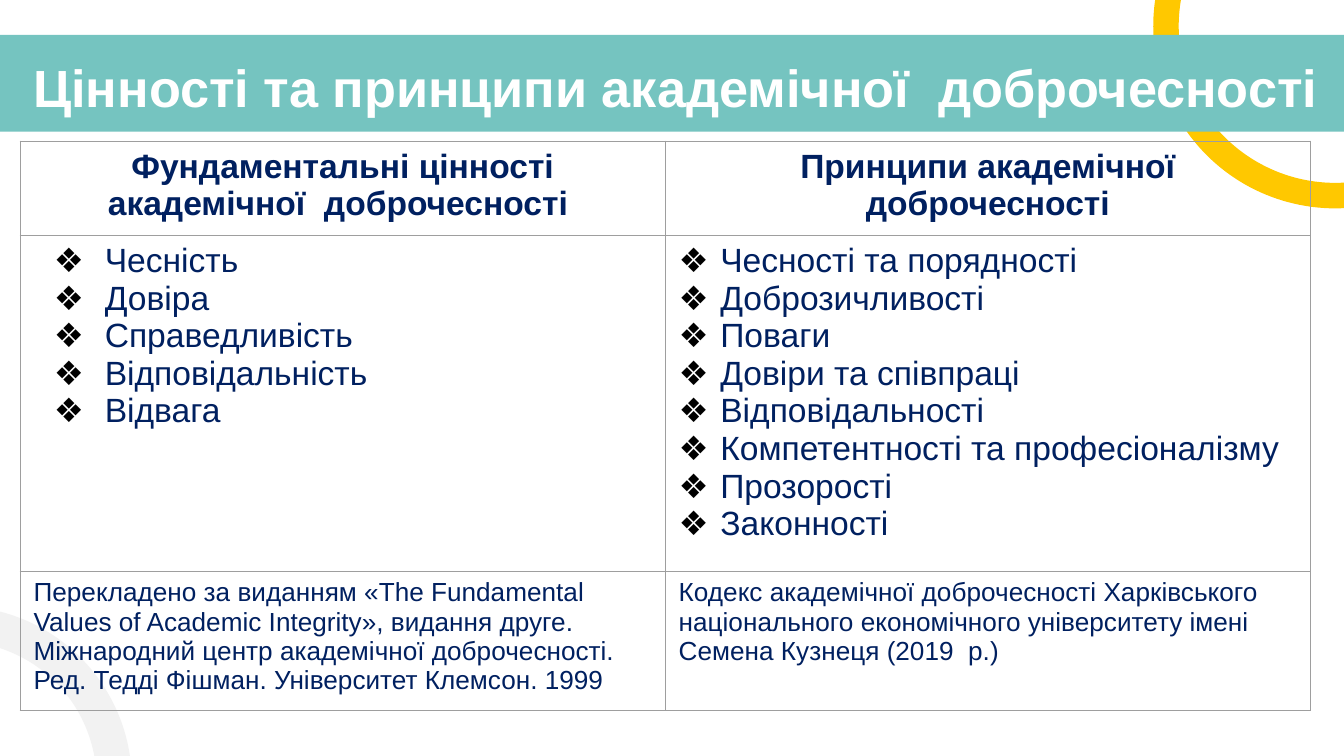
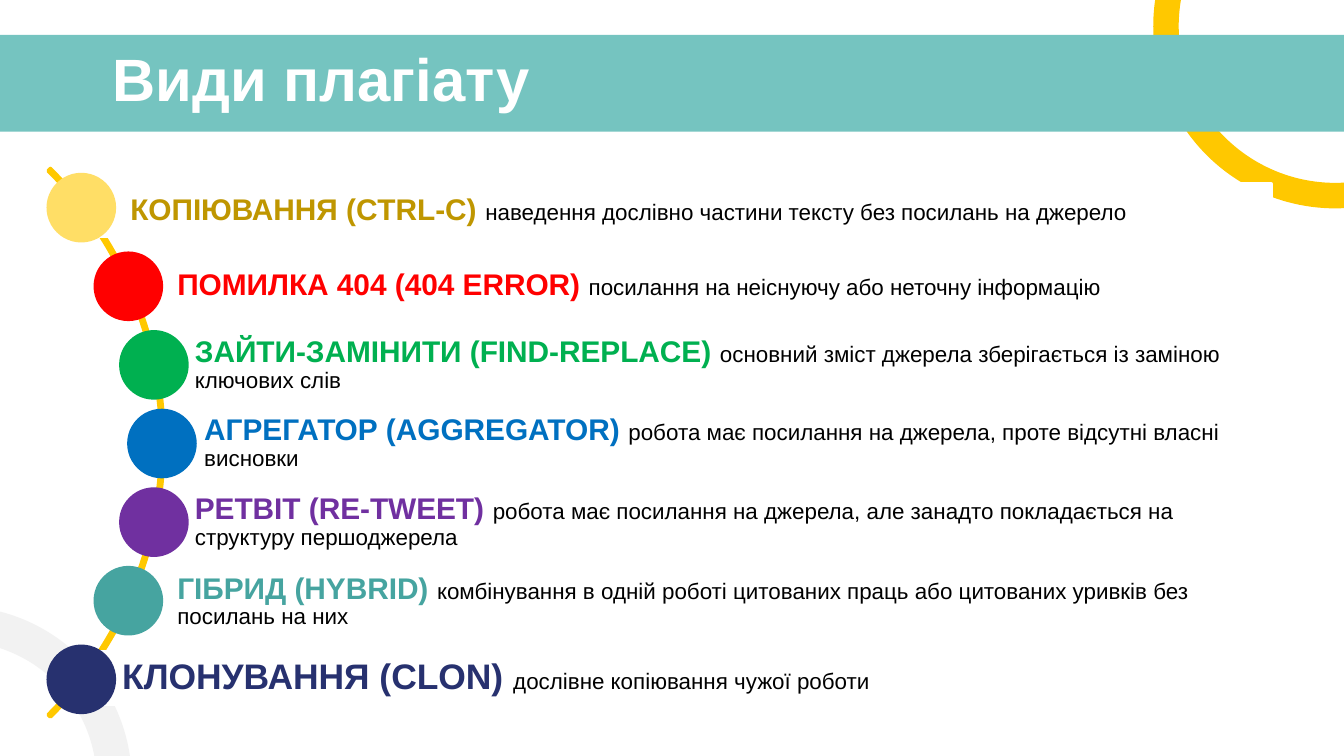
from lxml import etree
from pptx import Presentation
from pptx.dml.color import RGBColor
from pptx.enum.shapes import MSO_SHAPE
from pptx.enum.text import MSO_ANCHOR, PP_ALIGN
from pptx.oxml.ns import qn
from pptx.util import Inches, Pt

RECT, OVAL, ARC = MSO_SHAPE.RECTANGLE, MSO_SHAPE.OVAL, MSO_SHAPE.BLOCK_ARC
TOP, MIDDLE = MSO_ANCHOR.TOP, MSO_ANCHOR.MIDDLE
LEFT, CENTER = PP_ALIGN.LEFT, PP_ALIGN.CENTER

COLORS = {
    "white": "FFFFFF", "black": "000000", "yellow": "FFC800", "band": "75C4C0",
    "ring": "F2F2F2", "navy": "002060", "border": "9E9E9E", "gold": "BF9600",
    "sand": "FFDE66", "red": "FF0000", "green": "00B050", "blue": "0070C0",
    "purple": "7030A0", "teal": "46A4A0", "indigo": "27316F",
}


def add_figure(slide, kind, box, fill=None, line=None, adjustments=(), rotation=0):
    figure = slide.shapes.add_shape(kind, *[Inches(v) for v in box])
    figure.shadow.inherit = False
    figure.rotation = rotation
    for i, value in enumerate(adjustments):
        figure.adjustments[i] = value
    for part, color in ((figure.fill, fill), (figure.line.fill, line)):
        if color:
            part.solid()
            part.fore_color.rgb = RGBColor.from_string(COLORS[color])
        else:
            part.background()
    if line:
        figure.line.width = Pt(2)
    return figure


def add_run(paragraph, text, size, color, bold):
    run = paragraph.add_run()
    run.text = text
    font_format = {"name": "Arial", "size": Pt(size), "bold": bold}
    for name, value in font_format.items():
        setattr(run.font, name, value)
    run.font.color.rgb = RGBColor.from_string(COLORS[color])


prs = Presentation()
prs.slide_width, prs.slide_height = Inches(10), Inches(10 * 9 / 16)

# Shared decoration and titles
titles = [
    ("Цінності та принципи академічної  доброчесності", 28, (0.15, 0.31, 9.85, 0.63), TOP),
    ("Види плагіату", 32, (0.74, 0.27, 6.68, 0.62), MIDDLE),
]
for text, size, box, anchor in titles:
    slide = prs.slides.add_slide(prs.slide_layouts[6])
    add_figure(slide, ARC, (8.58, -1.16, 2.71, 2.71), "yellow",
               adjustments=(159.04, 7.22, 0.07), rotation=180)
    add_figure(slide, RECT, (-0.17, 0.26, 10.34, 0.72), "band")
    add_figure(slide, ARC, (-1.63, 4.51, 2.61, 2.61), "ring",
               adjustments=(125.82, 166.85, 0.1), rotation=74.3)
    title = slide.shapes.add_textbox(*[Inches(v) for v in box]).text_frame
    title_format = {"word_wrap": True, "vertical_anchor": anchor}
    for side in ("left", "right", "top", "bottom"):
        title_format["margin_" + side] = Inches(0.1)
    for name, value in title_format.items():
        setattr(title, name, value)
    add_run(title.paragraphs[0], text, size, "white", True)
values_slide, plagiarism_slide = prs.slides

# Table of values and principles
headings = ["Фундаментальні цінності академічної  доброчесності ",
            "Принципи академічної доброчесності"]
values = ["Чесність", "Довіра", "Справедливість", "Відповідальність", "Відвага"]
principles = ["Чесності та порядності", "Доброзичливості", "Поваги",
              "Довіри та співпраці", "Відповідальності",
              "Компетентності та професіоналізму", "Прозорості", "Законності"]
sources = [
    "Перекладено за виданням «The Fundamental Values of Academic Integrity», "
    "видання друге. Міжнародний центр академічної доброчесності. "
    "Ред. Тедді Фішман. Університет Клемсон. 1999",
    "Кодекс академічної доброчесності Харківського національного економічного "
    "університету імені Семена Кузнеця (2019  р.)",
]
# Each row: height, text size, bold, alignment, paragraphs of both cells
rows = [
    (0.59, 18, True, CENTER, [[text] for text in headings]),
    (2.48, 18, False, LEFT, [values, principles]),
    (0.41, 14, False, LEFT, [[text] for text in sources]),
]
bullet_indents = [(0.53, 0.38), (0.31, 0.31)]

comparison = values_slide.shapes.add_table(
    3, 2, Inches(0.15), Inches(1.05), Inches(9.6), Inches(4.23))
table = comparison.table
table.first_row = table.horz_banding = False
for r, (height, size, bold, align, cells) in enumerate(rows):
    table.rows[r].height = Inches(height)
    for c, lines in enumerate(cells):
        cell = table.cell(r, c)
        cell_props = cell._tc.get_or_add_tcPr()
        for edge in ("a:lnL", "a:lnR", "a:lnT", "a:lnB"):
            border = etree.SubElement(cell_props, qn(edge), w=str(Pt(0.75)))
            solid = etree.SubElement(border, qn("a:solidFill"))
            etree.SubElement(solid, qn("a:srgbClr"), val=COLORS["border"])
        cell.fill.background()
        for i, text in enumerate(lines):
            frame = cell.text_frame
            paragraph = frame.add_paragraph() if i else frame.paragraphs[0]
            paragraph.alignment = align
            add_run(paragraph, text, size, "navy", bold)
            if len(lines) > 1:
                margin, hanging = bullet_indents[c]
                props = paragraph._p.get_or_add_pPr()
                props.set("marL", str(Inches(margin)))
                props.set("indent", str(-Inches(hanging)))
                bullet_color = etree.SubElement(props, qn("a:buClr"))
                etree.SubElement(bullet_color, qn("a:srgbClr"), val=COLORS["black"])
                etree.SubElement(props, qn("a:buFont"), typeface="Arial")
                etree.SubElement(props, qn("a:buChar"), char="❖")
# Row heights are minimums; the frame is as tall as the wrapped text needs
comparison.height = Inches(4.23)

# Kinds of plagiarism along an arc
add_figure(plagiarism_slide, ARC, (-4.55, 0.41, 5.77, 5.77), line="yellow",
           adjustments=(189, 27, 0.004))
# Each kind: name, explanation, name colour, dot colour, dot left, label left, top and right
kinds = [
    ("КОПІЮВАННЯ (CTRL-C) ", "наведення дослівно частини тексту без посилань на джерело",
     "gold", "sand", 0.36, 0.66, 1.37, 9.46),
    ("ПОМИЛКА 404 (404 ERROR) ", "посилання на неіснуючу або неточну інформацію",
     "red", "red", 0.71, 1.01, 1.93, 9.46),
    ("ЗАЙТИ-ЗАМІНИТИ (FIND-REPLACE) ",
     "основний зміст джерела зберігається із заміною ключових слів",
     "green", "green", 0.9, 1.14, 2.52, 9.39),
    ("АГРЕГАТОР (AGGREGATOR) ",
     "робота має посилання на джерела, проте відсутні власні висновки",
     "blue", "blue", 0.96, 1.21, 3.1, 9.4),
    ("РЕТВІТ (RE-TWEET) ",
     "робота має посилання на джерела, але занадто покладається на структуру першоджерела",
     "purple", "purple", 0.9, 1.14, 3.69, 9.39),
    ("ГІБРИД (HYBRID) ",
     "комбінування в одній роботі цитованих праць або цитованих уривків без посилань на них",
     "teal", "teal", 0.71, 1.01, 4.28, 9.46),
    ("КЛОНУВАННЯ (CLON) ", "дослівне копіювання чужої роботи",
     "indigo", "indigo", 0.36, 0.6, 4.85, 9.4),
]
DOT, FIRST_TOP, LAST_TOP = 0.49, 1.3, 4.81
step = (LAST_TOP - FIRST_TOP) / (len(kinds) - 1)
label_format = {
    "word_wrap": True, "vertical_anchor": MIDDLE, "margin_left": Inches(0.31),
    "margin_right": Inches(0.04), "margin_top": Inches(0.04), "margin_bottom": Inches(0.04),
}
for i, (kind, meaning, color, dot_color, dot_left, left, top, right) in enumerate(kinds):
    label = add_figure(plagiarism_slide, RECT, (left, top, right - left, 0.39),
                       "white", "white").text_frame
    for name, value in label_format.items():
        setattr(label, name, value)
    paragraph = label.paragraphs[0]
    paragraph.alignment = LEFT
    paragraph.line_spacing = 0.9
    add_run(paragraph, kind, 19 if color == "indigo" else 16, color, True)
    add_run(paragraph, meaning, 12, "black", False)
    add_figure(plagiarism_slide, OVAL, (dot_left, FIRST_TOP + i * step, DOT, DOT),
               dot_color, dot_color)

prs.save("out.pptx")
